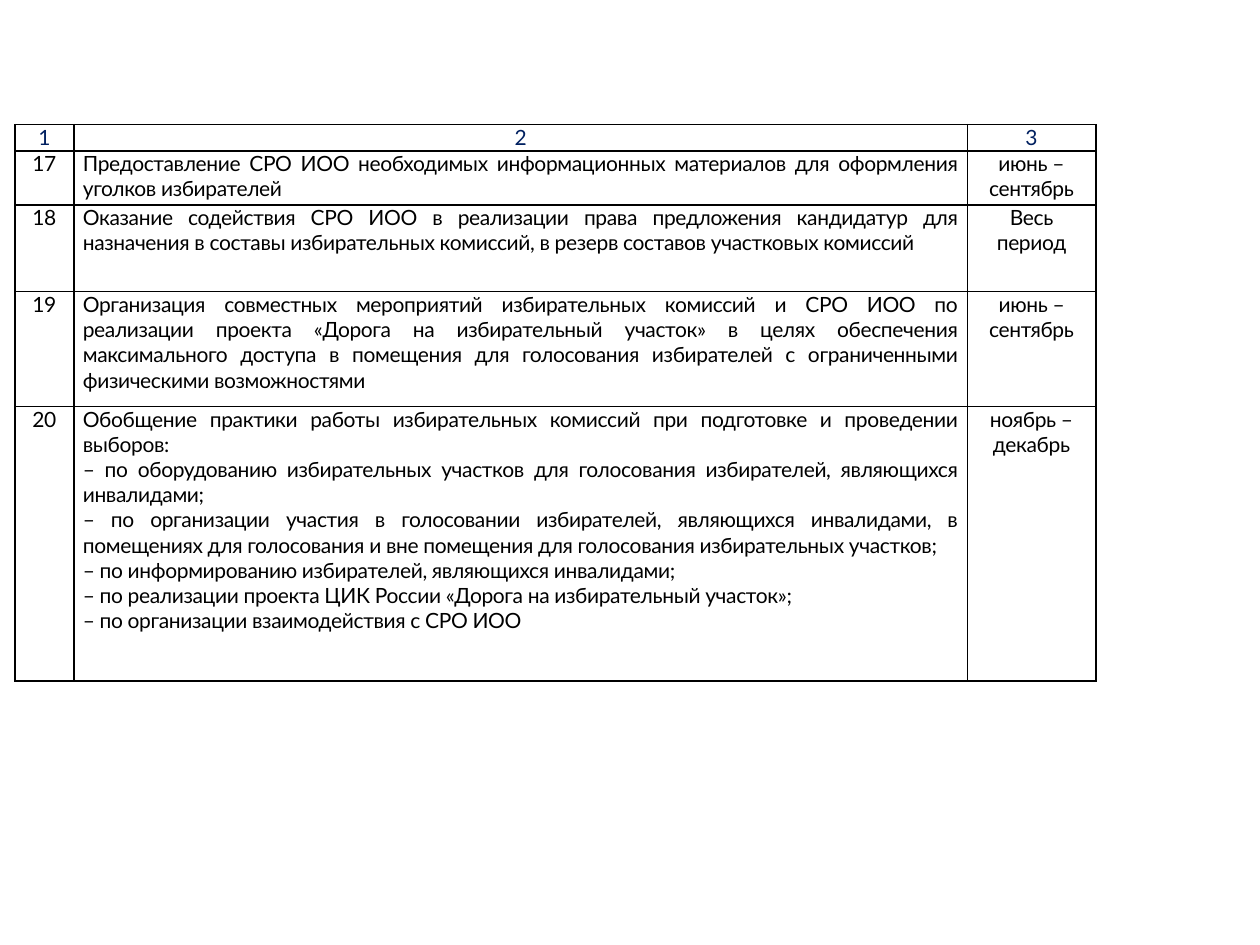
"""Build a slide with the final part of an election commission work plan."""
from dataclasses import dataclass

from lxml import etree
from pptx import Presentation
from pptx.dml.color import RGBColor
from pptx.enum import text
from pptx.oxml.ns import qn
from pptx.slide import Slide
from pptx.table import _Cell
from pptx.util import Cm, Pt


@dataclass(frozen=True)
class Theme:
    font: str = "Lato"
    size: float = 12
    spacing: int = -20
    heading: str = "002060"
    body: str = "000000"
    border: str = "000000"
    border_width: float = 1


@dataclass(frozen=True)
class PlanRow:
    number: str
    activity: tuple[str, ...]
    period: tuple[str, ...]
    height: float
    heading: bool = False


THEME = Theme()
COLUMN_WIDTHS = (1.19, 18.01, 2.59)
PLAN = (
    PlanRow("1", ("2",), ("3",), 0.53, heading=True),
    PlanRow(
        "17",
        ("Предоставление СРО ИОО необходимых информационных материалов "
         "для оформления уголков избирателей ",),
        ("июнь –", "сентябрь"), 1.09),
    PlanRow(
        "18",
        ("Оказание содействия СРО ИОО в реализации права предложения кандидатур "
         "для назначения в составы избирательных комиссий, "
         "в резерв составов участковых комиссий",),
        ("Весь", "период"), 1.75),
    PlanRow(
        "19",
        ("Организация совместных мероприятий избирательных комиссий и СРО ИОО "
         "по реализации проекта «Дорога на избирательный участок» "
         "в целях обеспечения максимального доступа в помещения для голосования "
         "избирателей с ограниченными физическими возможностями",),
        ("июнь –сентябрь",), 2.31),
    PlanRow(
        "20",
        ("Обобщение практики работы избирательных комиссий "
         "при подготовке и проведении выборов:",
         "– по оборудованию избирательных участков для голосования избирателей, "
         "являющихся инвалидами;",
         "– по организации участия в голосовании избирателей, являющихся инвалидами, "
         "в помещениях для голосования и вне помещения для голосования "
         "избирательных участков;",
         "– по информированию избирателей, являющихся инвалидами;",
         "– по реализации проекта ЦИК России «Дорога на избирательный участок»;",
         "– по организации взаимодействия с СРО ИОО"),
        ("ноябрь –", "декабрь"), 5.54),
)


def draw_borders(cell: _Cell) -> None:
    """Put a solid line on every side of the cell."""
    properties = cell._tc.get_or_add_tcPr()
    for position, side in enumerate(("a:lnL", "a:lnR", "a:lnT", "a:lnB")):
        line = etree.Element(qn(side), w=str(Pt(THEME.border_width)))
        fill = etree.SubElement(line, qn("a:solidFill"))
        etree.SubElement(fill, qn("a:srgbClr"), val=THEME.border)
        properties.insert(position, line)


def fill_cell(cell: _Cell, lines: tuple[str, ...], alignment: text.PP_ALIGN,
              heading: bool) -> None:
    """Write the lines as paragraphs and format the cell."""
    cell.fill.background()
    draw_borders(cell)
    cell.margin_left = cell.margin_right = Cm(0.18)
    cell.margin_top = cell.margin_bottom = 0
    cell.vertical_anchor = text.MSO_ANCHOR.MIDDLE if heading else text.MSO_ANCHOR.TOP
    frame = cell.text_frame
    for index, line in enumerate(lines):
        paragraph = frame.add_paragraph() if index else frame.paragraphs[0]
        paragraph.alignment = alignment
        run = paragraph.add_run()
        run.text = line
        run.font.name = THEME.font
        run.font.size = Pt(THEME.size)
        run.font.color.rgb = RGBColor.from_string(THEME.heading if heading else THEME.body)
        run._r.get_or_add_rPr().set("spc", str(THEME.spacing))


def draw_plan(slide: Slide, plan: tuple[PlanRow, ...]) -> None:
    """Add the plan table to the slide."""
    width = Cm(sum(COLUMN_WIDTHS))
    height = Cm(sum(row.height for row in plan))
    table = slide.shapes.add_table(
        len(plan), len(COLUMN_WIDTHS), Cm(0.3), Cm(2.51), width, height).table
    table.first_row = table.horz_banding = False
    for column, column_width in zip(table.columns, COLUMN_WIDTHS):
        column.width = Cm(column_width)
    center, justify = text.PP_ALIGN.CENTER, text.PP_ALIGN.JUSTIFY
    for row, entry in zip(table.rows, plan):
        row.height = Cm(entry.height)
        number, activity, period = row.cells
        fill_cell(number, (entry.number,), center, entry.heading)
        fill_cell(activity, entry.activity, center if entry.heading else justify, entry.heading)
        fill_cell(period, entry.period, center, entry.heading)


def main() -> None:
    """Create and save the presentation."""
    presentation = Presentation()
    presentation.slide_width, presentation.slide_height = Cm(25.4), Cm(19.05)
    slide = presentation.slides.add_slide(presentation.slide_layouts[6])
    draw_plan(slide, PLAN)
    presentation.save("out.pptx")


if __name__ == "__main__":
    main()
